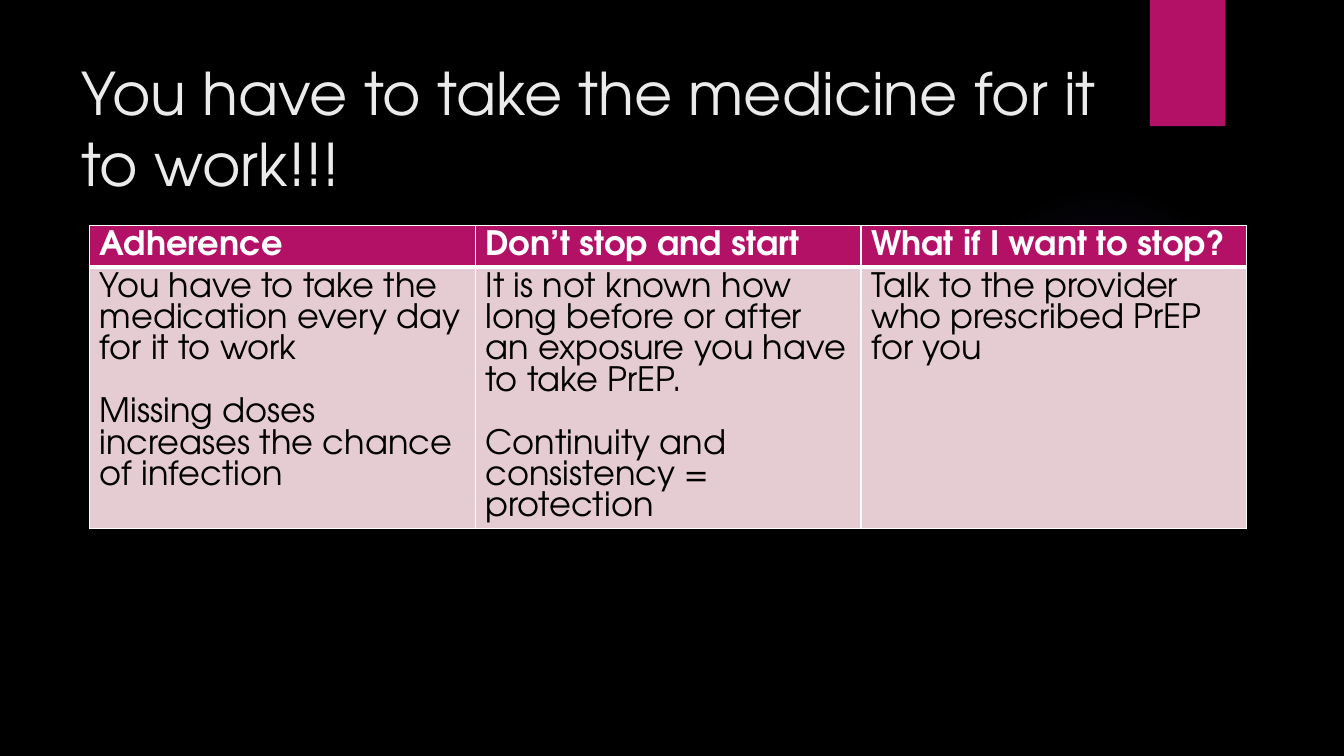
from lxml import etree
from pptx import Presentation, util as u
from pptx.dml.color import RGBColor
from pptx.enum import shapes, text
from pptx.oxml import parse_xml
from pptx.oxml.ns import nsdecls, qn

COLOURS = {"background": "000000", "accent": "B31166", "glow": "9B6BF2",
           "title": "EBEBEB", "header": "FFFFFF", "body": "000000",
           "cell": "E5CCD3", "border": "FFFFFF"}
COLUMNS = [
    ("Adherence",
     ["You have to take the medication every day for it to work",
      "Missing doses increases the chance of infection"]),
    ("Don’t stop and start",
     ["It is not known how long before or after an exposure you have to take PrEP.",
      "Continuity and consistency = protection"]),
    ("What if I want to stop?",
     ["Talk to the provider who prescribed PrEP for you"]),
]


class SlideBuilder:
    font = "TeX Gyre Adventor"
    table_size = u.Pt(24)
    table_line = u.Pt(22.4)

    def __init__(self, slide):
        self.slide = slide
        self.paint(slide.background.fill, "background")

    def paint(self, fill, colour):
        fill.solid()
        fill.fore_color.rgb = RGBColor.from_string(COLOURS[colour])

    def run(self, paragraph, words, size, colour, bold=False):
        run = paragraph.add_run()
        run.text = words
        run.font.name, run.font.size, run.font.bold = self.font, size, bold
        run.font.color.rgb = RGBColor.from_string(COLOURS[colour])

    def shape(self, kind, left, top, width, height, colour):
        shape = self.slide.shapes.add_shape(
            kind, u.Cm(left), u.Cm(top), u.Cm(width), u.Cm(height))
        shape.shadow.inherit = False
        shape.line.fill.background()
        self.paint(shape.fill, colour)
        return shape

    def glow(self, left, top, diameter):
        """Add a circle that fades from a faint centre to nothing."""
        circle = self.shape(shapes.MSO_SHAPE.OVAL, left, top, diameter, diameter, "glow")
        stops = "".join(
            f'<a:gs pos="{position}000"><a:srgbClr val="{COLOURS["glow"]}">'
            f'<a:alpha val="{opacity}000"/></a:srgbClr></a:gs>'
            for position, opacity in [(0, 7), (36, 6), (69, 0)])
        gradient = parse_xml(
            f'<a:gradFill {nsdecls("a")}><a:gsLst>{stops}</a:gsLst><a:path path="circle">'
            '<a:fillToRect l="50000" t="50000" r="50000" b="50000"/></a:path></a:gradFill>')
        properties = circle._element.spPr
        properties.replace(properties.find(qn("a:solidFill")), gradient)

    def title(self, words, left, top, width, height):
        title = self.slide.shapes.title
        title.left, title.top = u.Cm(left), u.Cm(top)
        title.width, title.height = u.Cm(width), u.Cm(height)
        frame = title.text_frame
        frame.word_wrap = True
        frame.auto_size = text.MSO_AUTO_SIZE.NONE
        frame.vertical_anchor = text.MSO_ANCHOR.MIDDLE
        paragraph = frame.paragraphs[0]
        paragraph.alignment = text.PP_ALIGN.LEFT
        self.run(paragraph, words, u.Pt(42), "title")

    def borders(self, cell, bottom):
        properties = cell._tc.get_or_add_tcPr()
        for side, points in [("L", 1), ("R", 1), ("T", 1), ("B", bottom)]:
            line = etree.SubElement(properties, qn(f"a:ln{side}"), w=str(u.Pt(points)))
            fill = etree.SubElement(line, qn("a:solidFill"))
            etree.SubElement(fill, qn("a:srgbClr"), val=COLOURS["border"])

    def cell(self, cell, paragraphs, fill, colour, bold=False, bottom=1):
        self.borders(cell, bottom)
        self.paint(cell.fill, fill)
        frame = cell.text_frame
        for index, words in enumerate(paragraphs):
            paragraph = frame.add_paragraph() if index else frame.paragraphs[0]
            paragraph.line_spacing = self.table_line
            if index:
                paragraph.space_before = self.table_line
            self.run(paragraph, words, self.table_size, colour, bold)

    def table(self, columns, left, top, column_width, row_heights):
        table = self.slide.shapes.add_table(
            len(row_heights), len(columns), u.Cm(left), u.Cm(top),
            u.Cm(column_width * len(columns)), u.Cm(sum(row_heights))).table
        for row, height in zip(table.rows, row_heights):
            row.height = u.Cm(height)
        for index, (heading, advice) in enumerate(columns):
            table.columns[index].width = u.Cm(column_width)
            self.cell(table.cell(0, index), [heading], "accent", "header",
                      bold=True, bottom=3)
            self.cell(table.cell(1, index), advice, "cell", "body")


def main():
    deck = Presentation()
    deck.slide_width, deck.slide_height = u.Cm(33.87), u.Cm(19.05)
    builder = SlideBuilder(deck.slides.add_slide(deck.slide_layouts[5]))
    builder.glow(23.9, 4.65, 7.82)
    builder.shape(shapes.MSO_SHAPE.RECTANGLE, 28.98, 0, 1.9, 3.18, "accent")
    builder.title("You have to take the medicine for it to work!!!", 1.8, 1.27, 26.14, 3.89)
    builder.table(COLUMNS, 2.26, 5.69, 9.72, [1.04, 6.53])
    deck.save("out.pptx")


if __name__ == "__main__":
    main()
